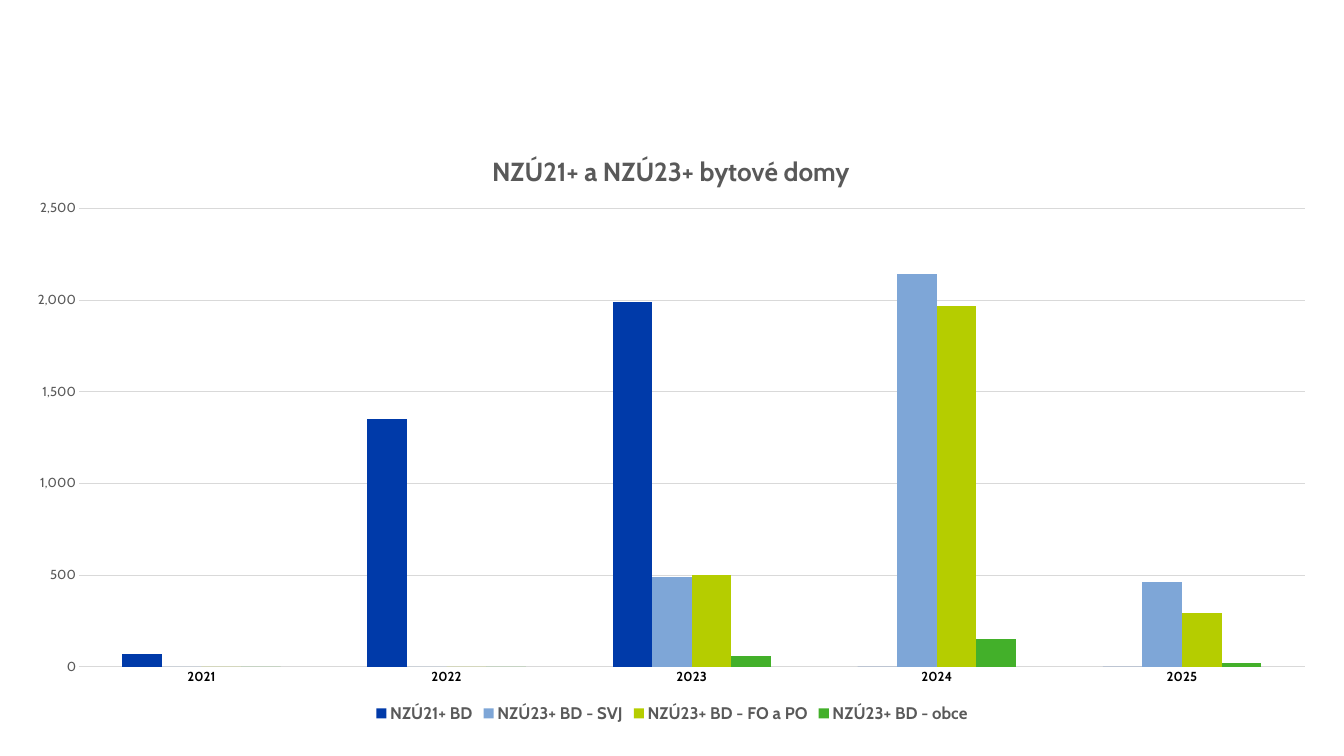
import pptx
import pptx.util
import pptx.dml.color
import pptx.chart.data
import pptx.enum.chart
import pptx.oxml

RGB = pptx.dml.color.RGBColor
BLACK = RGB(0x00, 0x00, 0x00)
GRAY = RGB(0x59, 0x59, 0x59)
RULE = RGB(0xD9, 0xD9, 0xD9)
NAVY = RGB(0x00, 0x3A, 0xA9)
SKY = RGB(0x7E, 0xA6, 0xD7)
LIME = RGB(0xB5, 0xCD, 0x00)
GREEN = RGB(0x43, 0xB0, 0x2A)

FACE = "Cabin"
TITLE = "NZÚ21+ a NZÚ23+ bytové domy"
YEARS = ["2021", "2022", "2023", "2024", "2025"]
SERIES = [
    ("NZÚ21+ BD", NAVY, (70, 1350, 1990, 0, 0)),
    ("NZÚ23+ BD - SVJ", SKY, (0, 0, 490, 2140, 460)),
    ("NZÚ23+ BD - FO a PO", LIME, (0, 0, 500, 1970, 290)),
    ("NZÚ23+ BD - obce", GREEN, (0, 0, 60, 150, 20)),
]
SIZE = (1344, 756)
BOX = (13, 124, 1318, 603)
PLOT = {"x": 0.05, "y": 0.14, "w": 0.93, "h": 0.76}
HEAD = {"x": 0.36, "y": 0.04}
NS = "http://schemas.openxmlformats.org/drawingml/2006/chart"


def px(n):
    return pptx.util.Emu(round(n * 914400 / 67.2))


def style(font, size, color, bold=False):
    font.name = FACE
    font.size = pptx.util.Pt(size)
    font.bold = bold
    font.color.rgb = color


def rule(line):
    line.color.rgb = RULE
    line.width = pptx.util.Pt(0.75)


def layout(spots, inner=False):
    target = '<c:layoutTarget val="inner"/>' if inner else ""
    modes = "".join(f'<c:{key}Mode val="edge"/>' for key in spots if key in "xy")
    places = "".join(f'<c:{key} val="{val}"/>' for key, val in spots.items())
    return pptx.oxml.parse_xml(
        f'<c:layout xmlns:c="{NS}"><c:manualLayout>{target}{modes}{places}'
        "</c:manualLayout></c:layout>"
    )


def place(parent, node, index):
    for old in parent.findall(f"{{{NS}}}layout"):
        parent.remove(old)
    parent.insert(index, node)


def main():
    deck = pptx.Presentation()
    deck.slide_width, deck.slide_height = map(px, SIZE)
    slide = deck.slides.add_slide(deck.slide_layouts[6])

    data = pptx.chart.data.CategoryChartData(number_format="#,##0")
    data.categories = YEARS
    for name, _, vals in SERIES:
        data.add_series(name, vals)
    kind = pptx.enum.chart.XL_CHART_TYPE.COLUMN_CLUSTERED
    chart = slide.shapes.add_chart(kind, *map(px, BOX), data).chart
    style(chart.font, 10, BLACK)

    chart.has_title = True
    frame = chart.chart_title.text_frame
    frame.text = TITLE
    style(frame.paragraphs[0].runs[0].font, 28, GRAY, True)
    chart.chart_title.include_in_layout = False
    place(chart.chart_title._element, layout(HEAD), 1)

    plot = chart.plots[0]
    plot.gap_width = 219
    plot.overlap = 0
    plot.vary_by_categories = False
    for bars, (_, color, _) in zip(plot.series, SERIES):
        bars.format.fill.solid()
        bars.format.fill.fore_color.rgb = color
    area = chart._chartSpace.find(f".//{{{NS}}}plotArea")
    place(area, layout(PLOT, True), 0)

    none = pptx.enum.chart.XL_TICK_MARK.NONE
    cat, val = chart.category_axis, chart.value_axis
    for axis in (cat, val):
        axis.major_tick_mark = none
        axis.minor_tick_mark = none
    style(cat.tick_labels.font, 14, BLACK, True)
    style(val.tick_labels.font, 14, GRAY)
    rule(cat.format.line)
    val.format.line.fill.background()
    val.has_major_gridlines = True
    rule(val.major_gridlines.format.line)
    val.minimum_scale, val.maximum_scale, val.major_unit = 0, 2500, 500
    val.tick_labels.number_format = "#,##0"
    val.tick_labels.number_format_is_linked = False

    chart.has_legend = True
    chart.legend.position = pptx.enum.chart.XL_LEGEND_POSITION.BOTTOM
    chart.legend.include_in_layout = False
    style(chart.legend.font, 18, GRAY, True)

    deck.save("out.pptx")


if __name__ == "__main__":
    main()
